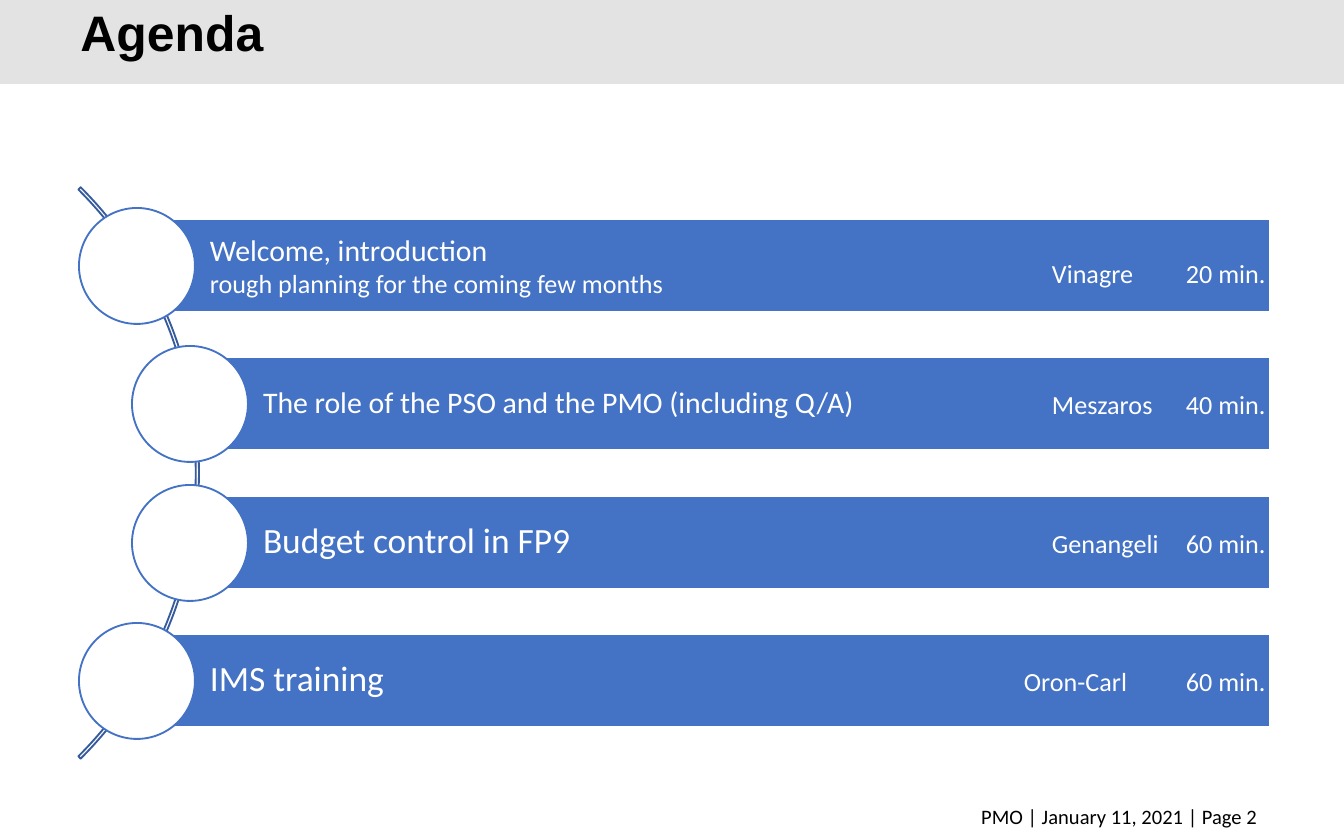
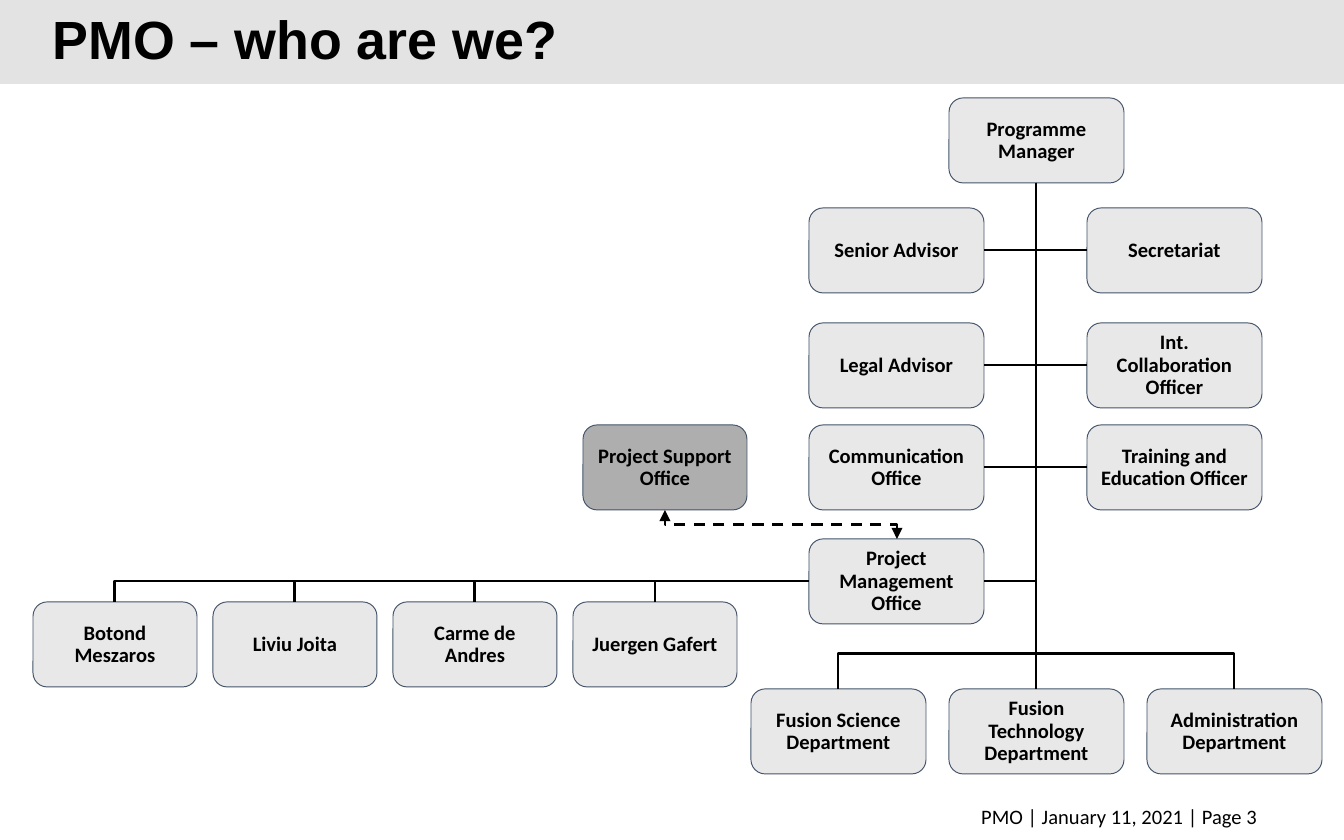
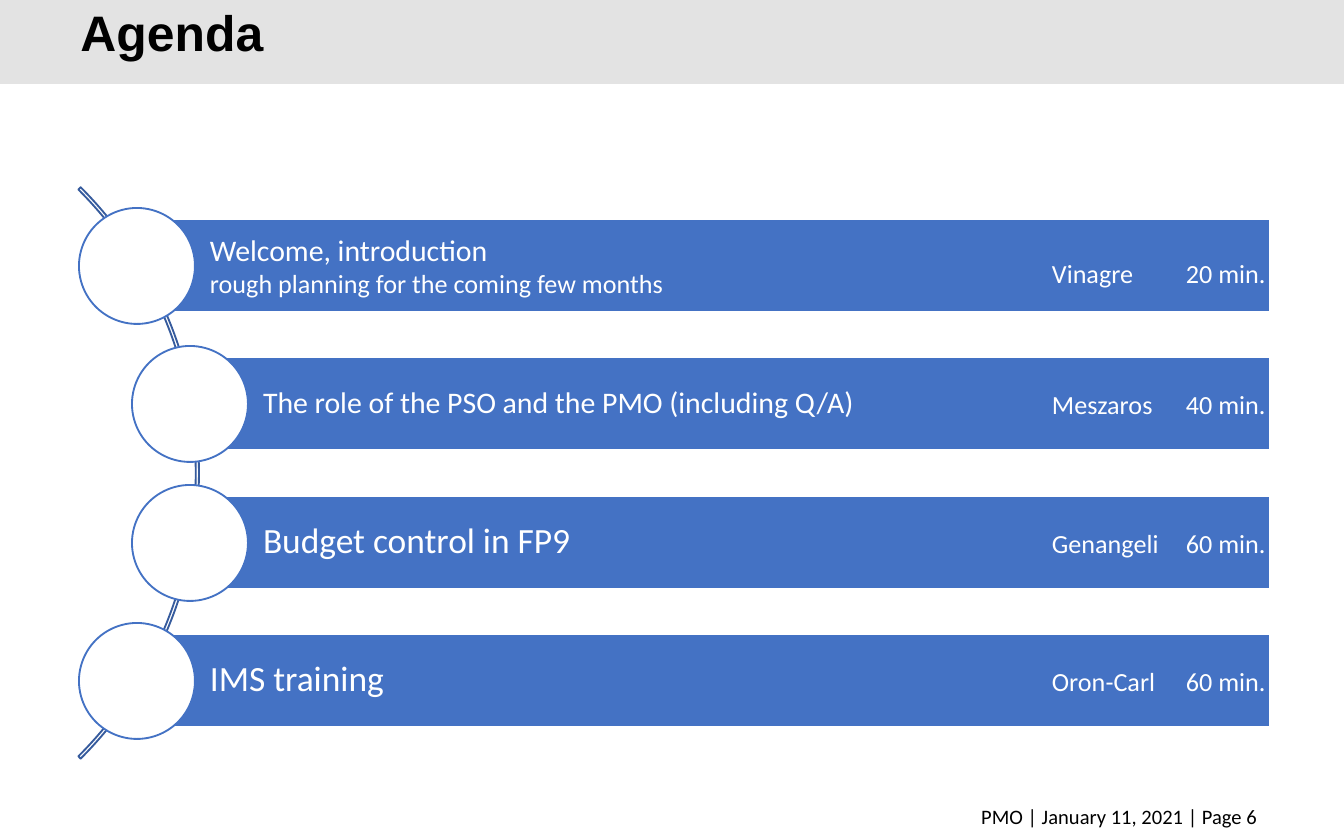
from lxml import etree
from pptx import Presentation
from pptx.dml.color import RGBColor
from pptx.enum.dml import MSO_LINE
from pptx.enum.shapes import MSO_CONNECTOR, MSO_SHAPE
from pptx.enum.text import MSO_ANCHOR, MSO_AUTO_SIZE, PP_ALIGN
from pptx.oxml.ns import qn
from pptx.util import Emu, Pt

SCALE = 9144000 / 1344
RECT, ROUND = MSO_SHAPE.RECTANGLE, MSO_SHAPE.ROUNDED_RECTANGLE
OVAL, ARC = MSO_SHAPE.OVAL, MSO_SHAPE.BLOCK_ARC
ELBOW, STRAIGHT = MSO_CONNECTOR.ELBOW, MSO_CONNECTOR.STRAIGHT
LEFT, CENTER, RIGHT = PP_ALIGN.LEFT, PP_ALIGN.CENTER, PP_ALIGN.RIGHT
TOP, MIDDLE = MSO_ANCHOR.TOP, MSO_ANCHOR.MIDDLE
DASH, FIXED = MSO_LINE.DASH, MSO_AUTO_SIZE.NONE

COLORS = {
    "band": "E3E3E3", "blue": "4472C4", "arc": "365B9D", "white": "FFFFFF",
    "black": "000000", "box": "E7E6E6", "dark": "A6A6A6", "edge": "44546A",
}
DATE = "PMO | January 11, 2021 | Page {}"

AGENDA = [
    (79, 32, [("Welcome, introduction", 16), ("rough planning for the coming few months", 14)],
     "Vinagre", "20 min."),
    (132, 25, [("The role of the PSO and the PMO (including Q/A)", 16)], "Meszaros", "40 min."),
    (132, 25, [("Budget control in FP9", 19)], "Genangeli", "60 min."),
    (79, 25, [("IMS training", 19)], "Oron-Carl", "60 min."),
]
STAFF = ["Botond Meszaros", "Liviu Joita", "Carme de Andres", "Juergen Gafert"]
UNITS = ["Fusion Science Department", "Fusion Technology Department", "Administration Department"]
PAIRS = [
    (208, "Senior Advisor", "Secretariat"),
    (323, "Legal Advisor", "Int. Collaboration Officer"),
    (425, "Communication Office", "Training and Education Officer"),
]
WIDE, SLIM, HIGH = 175, 164, 85
SPINE, BASE = 1036, 183


def px(n):
    return Emu(round(n * SCALE))


def rgb(name):
    return RGBColor.from_string(COLORS[name])


def set_all(item, values):
    for key, value in values.items():
        setattr(item, key, value)


def write(shape, lines, color="white", face="Calibri", bold=False,
          align=LEFT, space=None, anchor=TOP, pads=None, wrap=True):
    frame = shape.text_frame
    set_all(frame, {"word_wrap": wrap, "vertical_anchor": anchor, "auto_size": FIXED})
    if pads:
        names = ("margin_left", "margin_top", "margin_right", "margin_bottom")
        set_all(frame, {name: px(pad) for name, pad in zip(names, pads)})
    for i, (text, size) in enumerate(lines):
        para = frame.add_paragraph() if i else frame.paragraphs[0]
        set_all(para, {"alignment": align, "line_spacing": space})
        run = para.add_run()
        run.text = text
        set_all(run.font, {"name": face, "size": Pt(size), "bold": bold})
        run.font.color.rgb = rgb(color)


def draw(slide, kind, x, y, w, h, fill=None, line=None, width=1):
    shape = slide.shapes.add_shape(kind, px(x), px(y), px(w), px(h))
    shape.shadow.inherit = False
    if fill:
        shape.fill.solid()
        shape.fill.fore_color.rgb = rgb(fill)
    else:
        shape.fill.background()
    if line:
        shape.line.color.rgb = rgb(line)
        shape.line.width = Pt(width)
    else:
        shape.line.fill.background()
    return shape


def label(slide, x, y, w, h, text, size, **form):
    box = slide.shapes.add_textbox(px(x), px(y), px(w), px(h))
    write(box, [(text, size)], **form)
    return box


def start(deck, title, page, x, y, size):
    slide = deck.slides.add_slide(deck.slide_layouts[5])
    head = slide.shapes.title
    set_all(head, {"left": px(x), "top": px(y), "width": px(1109), "height": px(56)})
    write(head, [(title, size)], "black", "Arial", True, space=Pt(26.7), anchor=MIDDLE)
    band = draw(slide, RECT, 0, 0, 1344, 84, "band")
    head.element.addprevious(band.element)
    label(slide, 968, 797, 320, 39, DATE.format(page), 11, color="black", wrap=False)
    return slide


def add_tab(box, stop):
    props = box.text_frame.paragraphs[0]._p.get_or_add_pPr()
    tabs = etree.SubElement(props, qn("a:tabLst"))
    etree.SubElement(tabs, qn("a:tab"), pos=str(px(stop)), algn="l")


def agenda(deck, page, last_tab):
    slide = start(deck, "Agenda", page, 67, 9, 26.7)
    arc = draw(slide, ARC, -609, 69, 808, 808, line="arc")
    for i, value in enumerate((189, 27, 0.004)):
        arc.adjustments[i] = value
    for i, (x, drop, lines, _, _) in enumerate(AGENDA):
        y = 219 + 277 * i // 2
        bar = draw(slide, RECT, x + 58, y, 1212 - x, 93, "blue", "white")
        write(bar, lines, space=0.9 if len(lines) == 1 else None,
              anchor=MIDDLE, pads=(73, 6, 6, 6))
        draw(slide, OVAL, x, y - 11, 116, 116, "white", "blue")
    for i, (_, drop, _, name, time) in enumerate(AGENDA):
        y = 219 + 277 * i // 2 + drop
        box = label(slide, 903, y, 376, 46, f"{name}\t{time}", 14, align=RIGHT)
        add_tab(box, last_tab if name == "Oron-Carl" else 134)


def node(slide, x, y, text, w=WIDE, fill="box"):
    shape = draw(slide, ROUND, x, y, w, HIGH, fill, "edge", 0.5)
    tint = shape.element.spPr.find(qn("a:solidFill"))[0]
    etree.SubElement(tint, qn("a:alpha"), val="90000")
    write(shape, [(text, 11)], "black", bold=True, align=CENTER, space=0.9,
          anchor=MIDDLE, pads=(9, 9, 9, 9))


def link(slide, x1, y1, x2, y2, kind=ELBOW, bend=None, dash=False):
    line = slide.shapes.add_connector(kind, px(x1), px(y1), px(x2), px(y2))
    line.line.color.rgb = rgb("black")
    line.line.width = Pt(1.5)
    props = line.element.spPr
    if bend is not None:
        guides = props.find(".//" + qn("a:avLst"))
        etree.SubElement(guides, qn("a:gd"), name="adj1", fmla=f"val {round(bend * 100000)}")
    if dash:
        line.line.dash_style = DASH
        for end in ("a:headEnd", "a:tailEnd"):
            etree.SubElement(props.find(qn("a:ln")), qn(end), type="triangle")
    etree.SubElement(props, qn("a:effectLst"))
    return line


def fall(slide, x1, y1, x2, y2, bend, dash=False):
    mx, my = (x1 + x2) / 2, (y1 + y2) / 2
    dx, dy = (x2 - x1) / 2, (y2 - y1) / 2
    line = link(slide, mx - dy, my + dx, mx + dy, my - dx, ELBOW, bend, dash)
    line.element.spPr.find(qn("a:xfrm")).set("rot", "5400000")


def chart(deck, page):
    slide = start(deck, "PMO – who are we?", page, 39, 17, 28.8)
    node(slide, 949, 98, "Programme Manager")
    for y, left, right in PAIRS:
        node(slide, 809, y, left)
        node(slide, 1087, y, right)
        for x in (984, 1087):
            link(slide, SPINE, BASE, x, y + 42, bend=0)
    node(slide, 809, 539, "Project Management Office")
    link(slide, SPINE, BASE, 984, 581, bend=0)
    for i, name in enumerate(STAFF):
        x = 33 + 180 * i
        node(slide, x, 602, name, SLIM)
        link(slide, 809, 581, x + SLIM // 2, 602, bend=1)
    for i, name in enumerate(UNITS):
        x = 751 + 198 * i
        node(slide, x, 689, name)
        if x + WIDE // 2 == SPINE:
            link(slide, SPINE, BASE, SPINE, 689, STRAIGHT)
        else:
            fall(slide, SPINE, BASE, x + WIDE // 2, 689, 0.93)
    node(slide, 583, 425, "Project Support Office", SLIM, "dark")
    fall(slide, 897, 539, 665, 510, 0.5, True)


def main():
    deck = Presentation()
    set_all(deck, {"slide_width": px(1344), "slide_height": px(840)})
    agenda(deck, 2, 162)
    chart(deck, 3)
    agenda(deck, 6, 134)
    deck.save("out.pptx")


if __name__ == "__main__":
    main()
